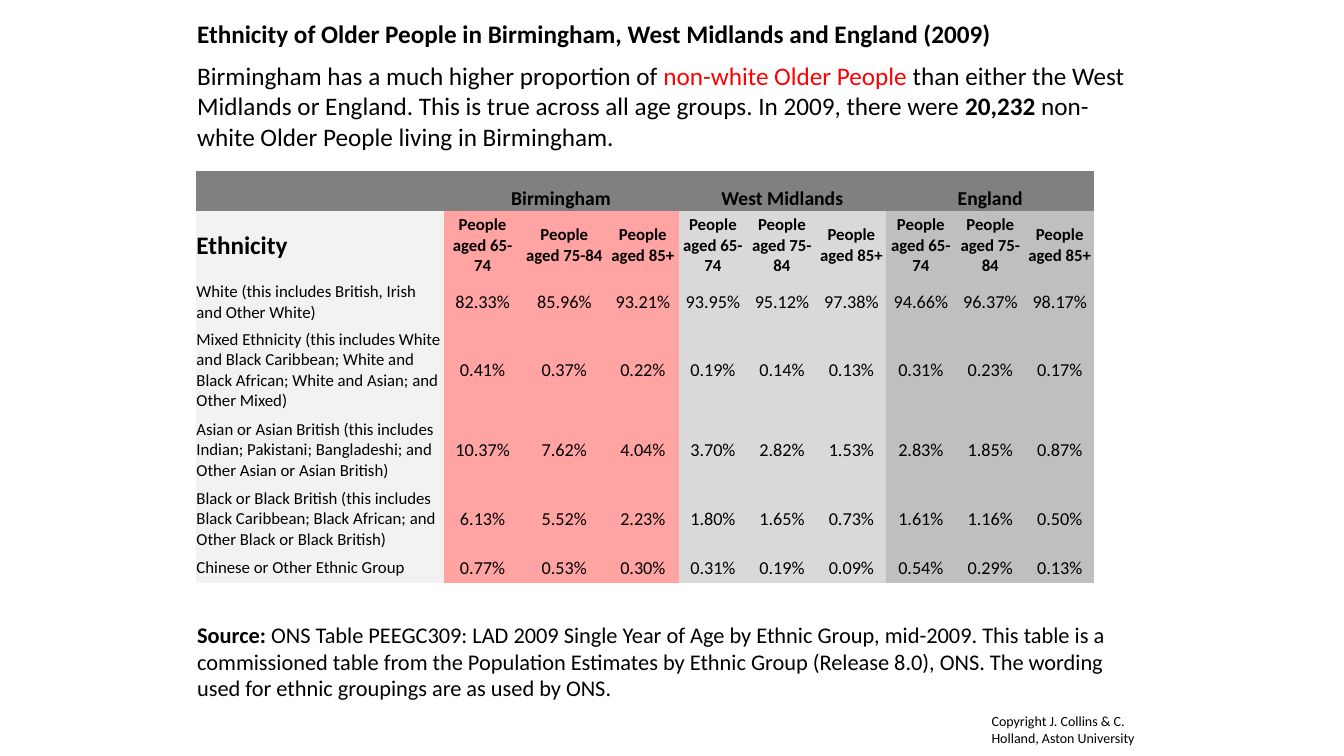
from pptx import Presentation
from pptx.dml.color import RGBColor
from pptx.enum.text import MSO_ANCHOR as Anchor, MSO_AUTO_SIZE as AutoSize, PP_ALIGN as Align
from pptx.oxml.ns import qn
from pptx.util import Cm, Pt

FONT = "Calibri"
COLOURS = {
    "text": "000000",
    "highlight": "FF0000",
    "header": "808080",
    "label": "F2F2F2",
    "Birmingham": "FFA3A3",
    "West Midlands": "D9D9D9",
    "England": "BFBFBF",
}
NO_STYLE_NO_GRID = "{2D5ABB26-0587-4C30-8999-92F81FD0307C}"

# Table content
REGIONS = ["Birmingham", "West Midlands", "England"]
AGE_GROUPS = ["People aged 65-74", "People aged 75-84", "People aged 85+"]
COLUMN_WIDTHS = [6.25, 1.96, 2.16, 1.8, 1.73] + [1.75] * 5
ROW_HEIGHTS = [0.99, 1.73, 1.14, 2.29, 1.73, 1.73, 0.76]
SHARES = {
    "White (this includes British, Irish and Other White)":
        "82.33% 85.96% 93.21% 93.95% 95.12% 97.38% 94.66% 96.37% 98.17%",
    "Mixed Ethnicity (this includes White and Black Caribbean; "
    "White and Black African; White and Asian; and Other Mixed)":
        "0.41% 0.37% 0.22% 0.19% 0.14% 0.13% 0.31% 0.23% 0.17%",
    "Asian or Asian British (this includes Indian; Pakistani; "
    "Bangladeshi; and Other Asian or Asian British)":
        "10.37% 7.62% 4.04% 3.70% 2.82% 1.53% 2.83% 1.85% 0.87%",
    "Black or Black British (this includes Black Caribbean; "
    "Black African; and Other Black or Black British)":
        "6.13% 5.52% 2.23% 1.80% 1.65% 0.73% 1.61% 1.16% 0.50%",
    "Chinese or Other Ethnic Group":
        "0.77% 0.53% 0.30% 0.31% 0.19% 0.09% 0.54% 0.29% 0.13%",
}


def style_font(font, size, bold=False, colour="text"):
    font.name = FONT
    font.size = Pt(size)
    font.bold = bold
    font.color.rgb = RGBColor.from_string(COLOURS[colour])


def add_text(page, left, top, width, height, size, spans):
    """Add one wrapped paragraph; each span is (text, bold, colour)."""
    box = page.shapes.add_textbox(Cm(left), Cm(top), Cm(width), Cm(height))
    frame = box.text_frame
    frame.word_wrap = True
    frame.auto_size = AutoSize.SHAPE_TO_FIT_TEXT
    para = frame.paragraphs[0]
    for text, bold, colour in spans:
        span = para.add_run()
        span.text = text
        style_font(span.font, size, bold, colour)


def fill_cell(cell, text, fill, size, bold=False, align=Align.CENTER, anchor=Anchor.MIDDLE):
    cell.fill.solid()
    cell.fill.fore_color.rgb = RGBColor.from_string(COLOURS[fill])
    cell.margin_left = cell.margin_right = cell.margin_top = Cm(0.02)
    cell.margin_bottom = 0
    cell.vertical_anchor = anchor
    para = cell.text_frame.paragraphs[0]
    para.text = text
    para.alignment = align
    style_font(para.font, size, bold)
    for span in para.runs:
        style_font(span.font, size, bold)


def add_ethnicity_table(page):
    frame = page.shapes.add_table(
        len(ROW_HEIGHTS), len(COLUMN_WIDTHS), Cm(4.93), Cm(4.32),
        Cm(sum(COLUMN_WIDTHS)), Cm(sum(ROW_HEIGHTS)))
    table = frame.table
    table.first_row = table.horz_banding = False
    frame._element.find(".//" + qn("a:tableStyleId")).text = NO_STYLE_NO_GRID
    for column, width in zip(table.columns, COLUMN_WIDTHS):
        column.width = Cm(width)
    for row, height in zip(table.rows, ROW_HEIGHTS):
        row.height = Cm(height)

    # Region header
    for cell in table.rows[0].cells:
        fill_cell(cell, "", "header", 14, True)
    groups = len(AGE_GROUPS)
    for index, region in enumerate(REGIONS):
        first = 1 + index * groups
        table.cell(0, first).merge(table.cell(0, first + groups - 1))
        fill_cell(table.cell(0, first), region, "header", 14, True, anchor=Anchor.BOTTOM)

    # Age groups
    fill_cell(table.cell(1, 0), "Ethnicity", "label", 18, True, Align.LEFT)
    for column, age_group in enumerate(AGE_GROUPS * len(REGIONS)):
        fill_cell(table.cell(1, column + 1), age_group, REGIONS[column // groups], 12, True)

    # Shares by ethnic group
    for row, (label, shares) in enumerate(SHARES.items(), start=2):
        fill_cell(table.cell(row, 0), label, "label", 12, align=Align.LEFT)
        for column, share in enumerate(shares.split()):
            fill_cell(table.cell(row, column + 1), share, REGIONS[column // groups], 13)


def main():
    deck = Presentation()
    deck.slide_width, deck.slide_height = Cm(33.87), Cm(19.05)
    page = deck.slides.add_slide(deck.slide_layouts[6])

    add_ethnicity_table(page)

    # Title and introduction
    add_text(page, 4.72, 0.33, 22, 1.02, 18, [
        ("Ethnicity of Older People in Birmingham, West Midlands and England (2009)", True, "text"),
    ])
    add_text(page, 4.72, 1.4, 24, 2.57, 18, [
        ("Birmingham has a much higher proportion of ", False, "text"),
        ("non-white Older People ", False, "highlight"),
        ("than either the West Midlands or England. This is true across all age groups. "
         "In 2009, there were ", False, "text"),
        ("20,232 ", True, "text"),
        ("non-white Older People living in Birmingham.", False, "text"),
    ])

    # Source and copyright
    add_text(page, 4.72, 15.52, 24, 2.31, 16, [
        ("Source: ", True, "text"),
        ("ONS Table PEEGC309: LAD 2009 Single Year of Age by Ethnic Group, mid-2009. "
         "This table is a commissioned table from the Population Estimates by Ethnic Group "
         "(Release 8.0), ONS. The wording used for ethnic groupings are as used by ONS.",
         False, "text"),
    ])
    add_text(page, 24.74, 17.83, 4.83, 1.12, 10, [
        ("Copyright J. Collins & C. Holland, Aston University", False, "text"),
    ])

    deck.save("out.pptx")


if __name__ == "__main__":
    main()
